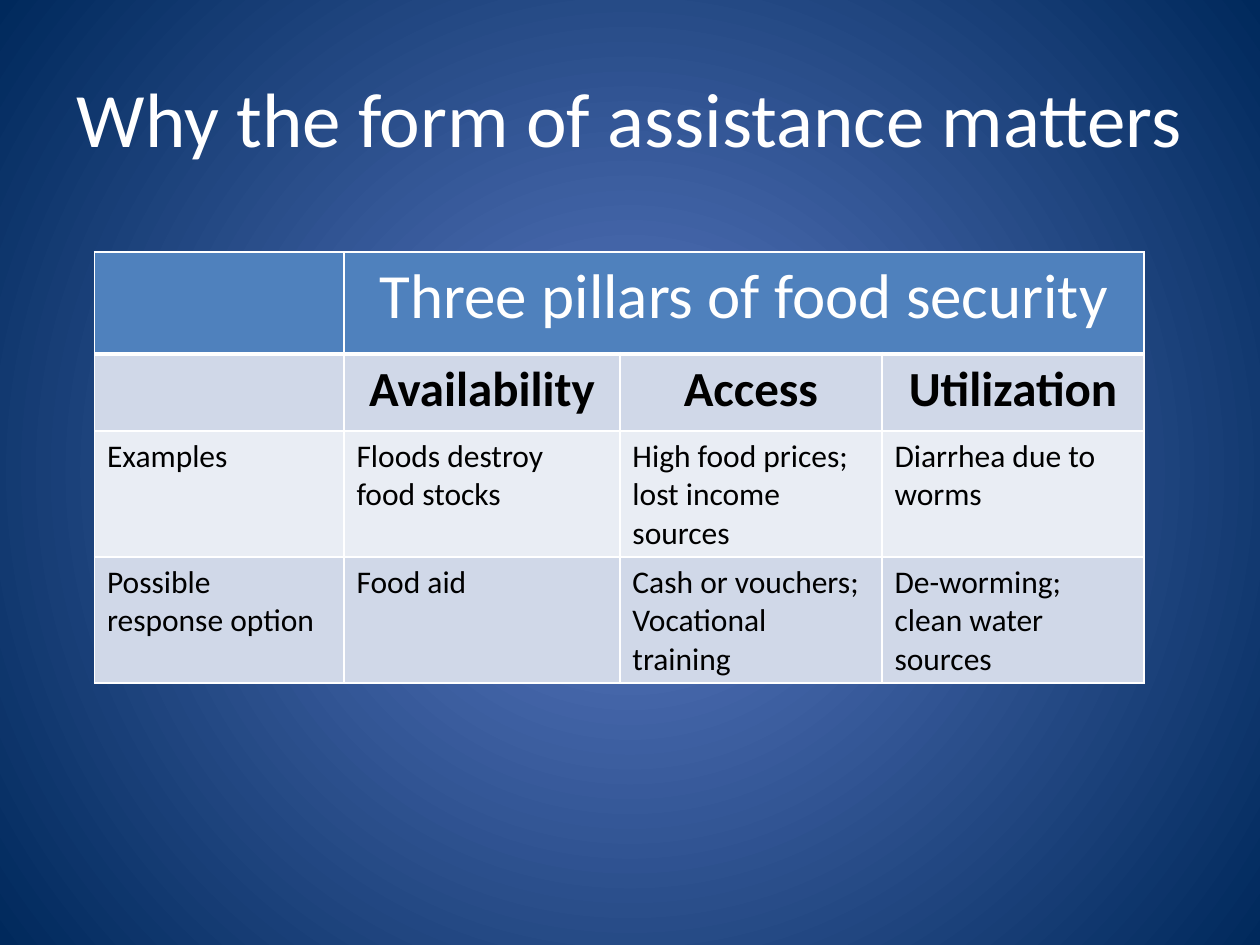
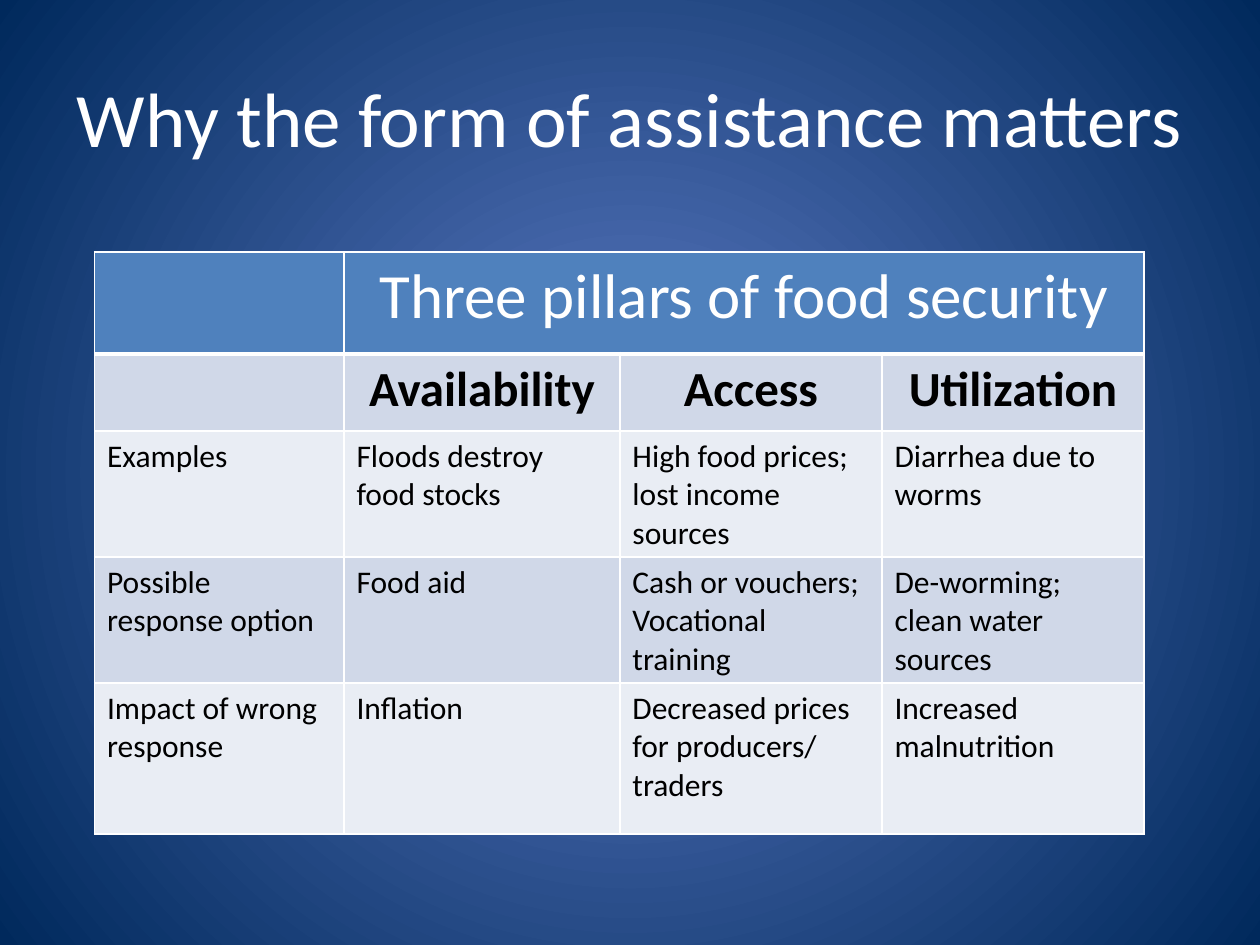
from pptx import Presentation
from pptx.dml.color import RGBColor
from pptx.enum.text import MSO_ANCHOR, PP_ALIGN
from pptx.oxml import parse_xml
from pptx.oxml.ns import nsdecls
from pptx.util import Inches, Pt

GLOW = RGBColor(0x5E, 0x7C, 0xC5)
NAVY = RGBColor(0x00, 0x29, 0x5C)
BLUE = RGBColor(0x4F, 0x81, 0xBD)
PALE = RGBColor(0xD0, 0xD8, 0xE8)
LIGHT = RGBColor(0xE9, 0xED, 0xF4)
WHITE = RGBColor(0xFF, 0xFF, 0xFF)
BLACK = RGBColor(0x00, 0x00, 0x00)

TITLE = {"name": "Calibri", "size": Pt(44), "bold": False}
HEAD = {"name": "Calibri", "size": Pt(36), "bold": False}
PILLAR = {"name": "Calibri", "size": Pt(28), "bold": True}
BODY = {"name": "Calibri", "size": Pt(18), "bold": False}

WIDTHS = [1.98, 2.19, 2.08, 2.08]
HEIGHTS = [0.81, 0.61, 1, 1, 1.2]
ROWS = [
    ["", "Three pillars of food security", "", ""],
    ["", "Availability", "Access", "Utilization"],
    ["Examples", "Floods destroy food stocks",
     "High food prices; lost income sources", "Diarrhea due to worms"],
    ["Possible response option", "Food aid",
     "Cash or vouchers; Vocational training", "De-worming; clean water sources"],
    ["Impact of wrong response", "Inflation",
     "Decreased prices for producers/ traders", "Increased malnutrition"],
]
LOOKS = [(HEAD, WHITE, BLUE, PP_ALIGN.CENTER), (PILLAR, BLACK, PALE, PP_ALIGN.CENTER),
         (BODY, BLACK, LIGHT, PP_ALIGN.LEFT), (BODY, BLACK, PALE, PP_ALIGN.LEFT),
         (BODY, BLACK, LIGHT, PP_ALIGN.LEFT)]


def write(frame, text, style, color, align):
    line = frame.paragraphs[0]
    line.alignment = align
    run = line.add_run()
    run.text = text
    for key, value in style.items():
        setattr(run.font, key, value)
    run.font.color.rgb = color


def edge(cell, base):
    props = cell._tc.get_or_add_tcPr()
    sides = {"lnL": 1, "lnR": 1, "lnT": 1, "lnB": base}
    for spot, (side, size) in enumerate(sides.items()):
        props.insert(spot, parse_xml(
            f'<a:{side} {nsdecls("a")} w="{Pt(size)}"><a:solidFill>'
            f'<a:srgbClr val="{WHITE}"/></a:solidFill></a:{side}>'))


deck = Presentation()
deck.slide_width, deck.slide_height = Inches(10), Inches(7.5)

for count in (4, 5):
    slide = deck.slides.add_slide(deck.slide_layouts[6])
    back = slide.background.fill
    back.gradient()
    for stop, color in zip(back.gradient_stops, (GLOW, NAVY)):
        stop.color.rgb = color
    blend = slide.element.xpath(".//p:bg//a:gradFill")[0]
    for child in blend.xpath("a:lin"):
        blend.remove(child)
    blend.append(parse_xml(
        f'<a:path {nsdecls("a")} path="circle">'
        '<a:fillToRect l="50000" t="50000" r="50000" b="50000"/></a:path>'))

    title = slide.shapes.add_textbox(Inches(0.5), Inches(0.3), Inches(9), Inches(1.25))
    title.text_frame.word_wrap = True
    title.text_frame.vertical_anchor = MSO_ANCHOR.MIDDLE
    write(title.text_frame, "Why the form of assistance matters", TITLE, WHITE, PP_ALIGN.CENTER)

    table = slide.shapes.add_table(
        count, len(WIDTHS), Inches(0.75), Inches(2),
        Inches(sum(WIDTHS)), Inches(sum(HEIGHTS[:count]))).table
    for col, width in zip(table.columns, WIDTHS):
        col.width = Inches(width)
    table.cell(0, 1).merge(table.cell(0, 3))
    for r, (row, texts) in enumerate(zip(table.rows, ROWS)):
        row.height = Inches(HEIGHTS[r])
        style, ink, shade, align = LOOKS[r]
        for cell, text in zip(row.cells, texts):
            cell.fill.solid()
            cell.fill.fore_color.rgb = shade
            edge(cell, 3 if r == 0 else 1)
            if text:
                write(cell.text_frame, text, style, ink, align)

deck.save("out.pptx")
